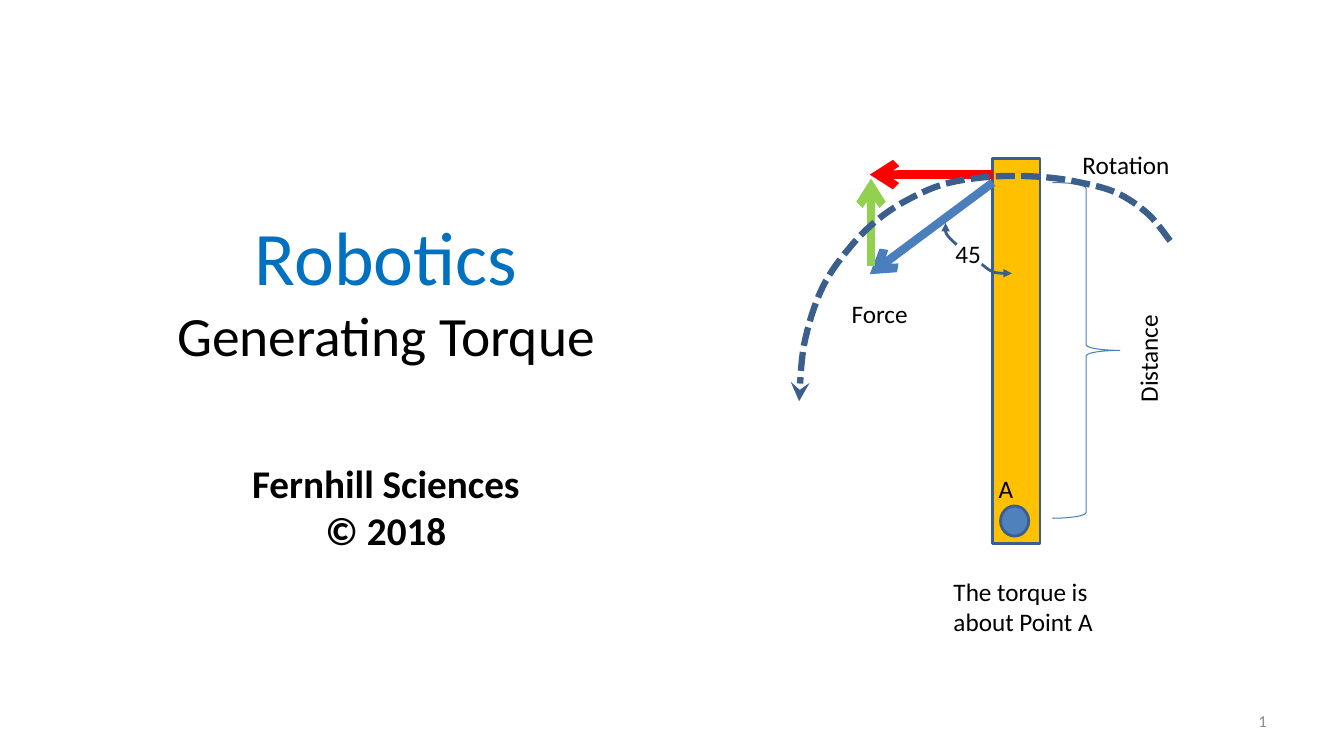
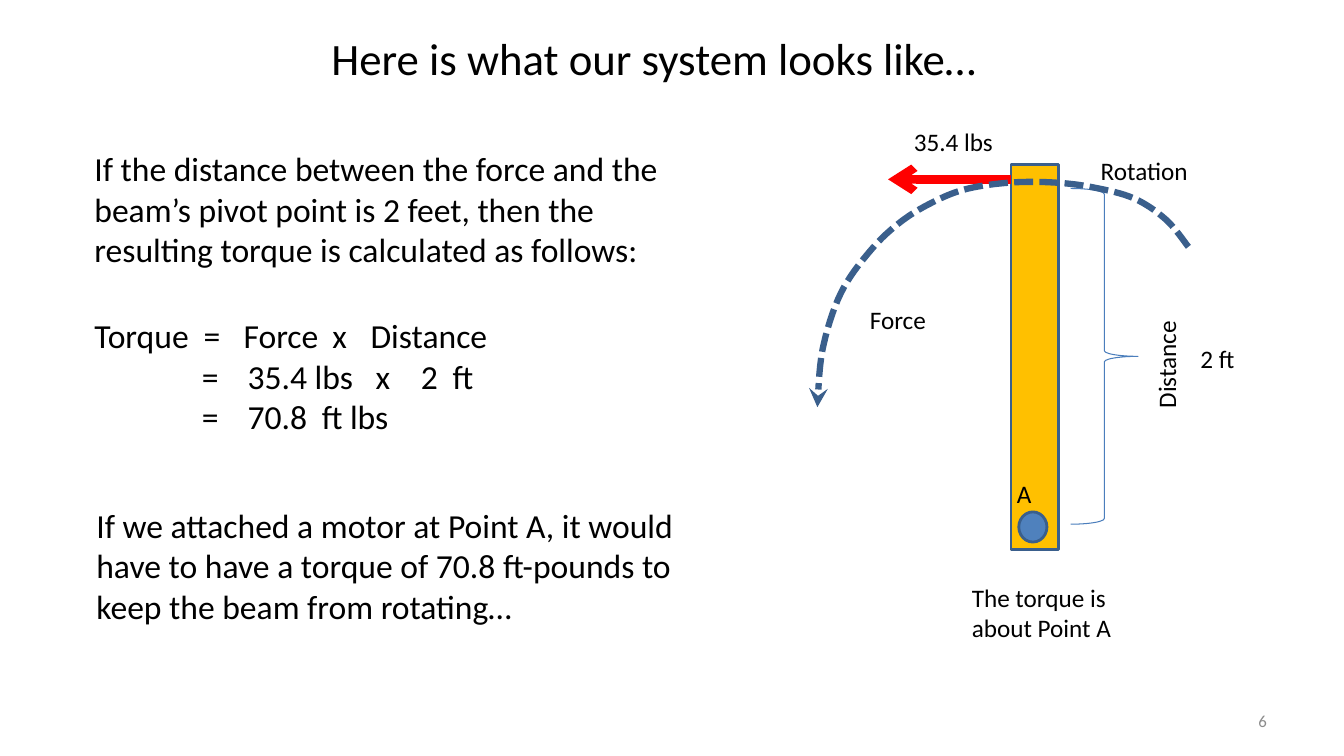
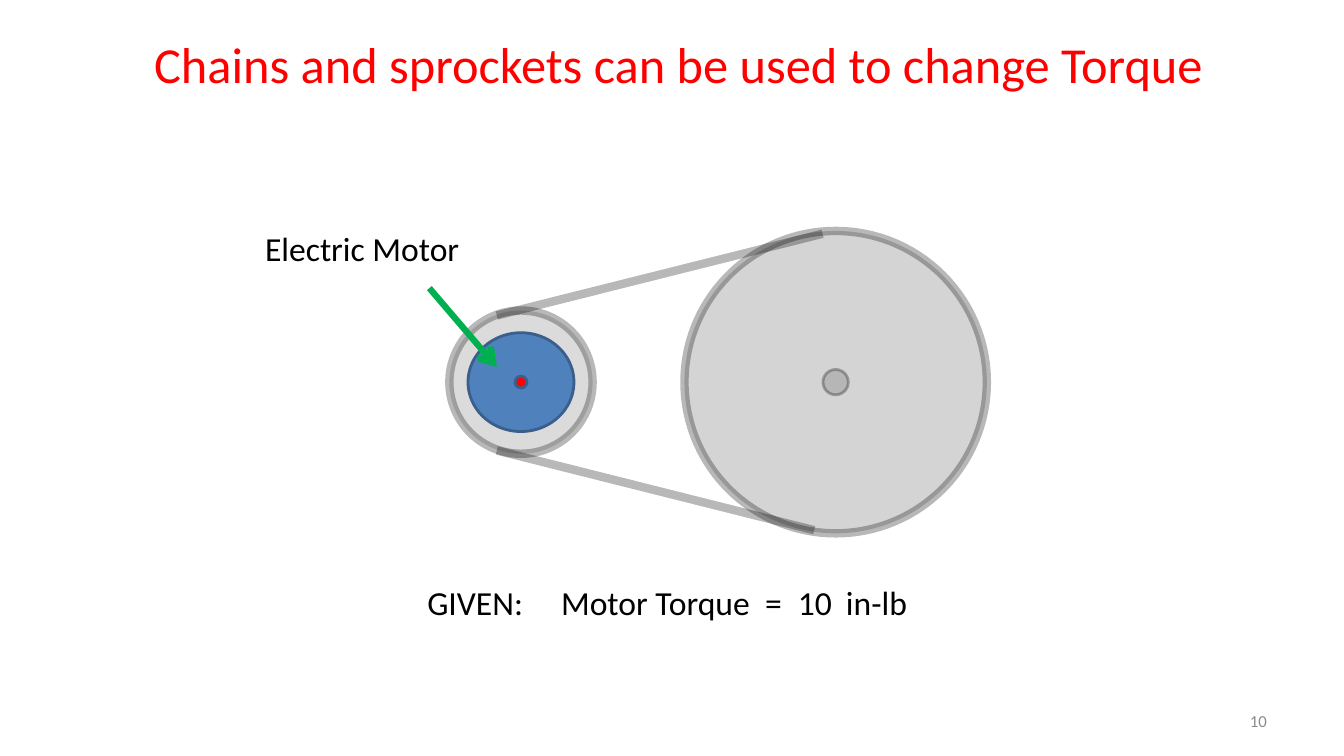
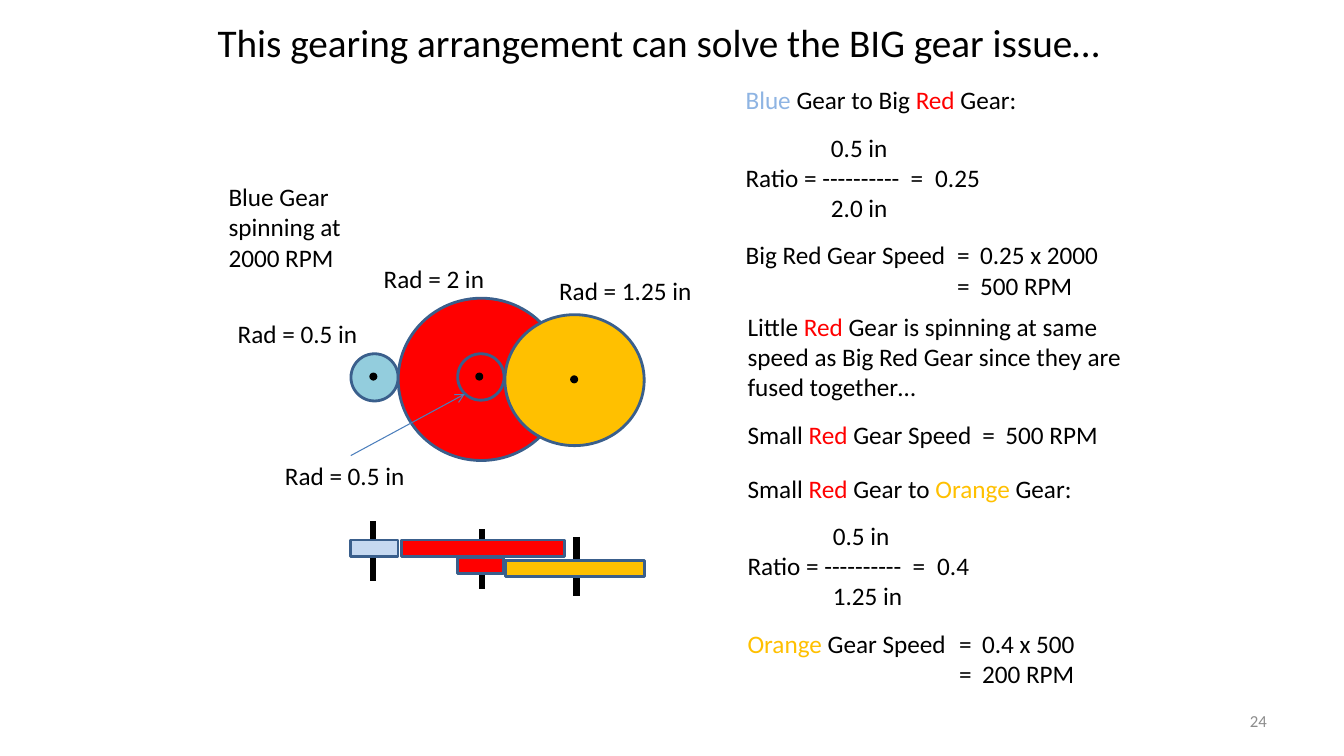
"""Build four slides about torque, sprockets and gears."""

from dataclasses import dataclass

from lxml.etree import SubElement
from pptx import Presentation
from pptx.dml.color import RGBColor
from pptx.enum.dml import MSO_LINE
from pptx.enum.shapes import MSO_CONNECTOR, MSO_SHAPE
from pptx.enum.text import MSO_ANCHOR, MSO_AUTO_SIZE, PP_ALIGN
from pptx.oxml.ns import qn
from pptx.util import Cm, Pt

FONT = "Calibri"
BLACK, GREY = "000000", "8C8C8C"
RED, ORANGE, GREEN, LIME = "FF0000", "FFC000", "00B050", "92D050"
BLUE, OUTLINE, STROKE = "4F81BD", "3A5F8C", "4B7EBC"
TITLE_BLUE, WORD_BLUE, GEAR_BLUE, BAR_BLUE = "0070C0", "8EB4E3", "93CDDD", "C6D9F1"
GAP = 12.2
ROTATION_ARC = [
    (4.47, 2.08), (3.91, 1.4), (3.1, 0.86), (2.06, 0.58), (1.09, 0.46),
    (0, 0.46), (-1.07, 0.61), (-1.88, 0.91), (-2.74, 1.42), (-3.53, 2.16),
    (-4.29, 3.25), (-4.75, 4.67), (-4.88, 6.12),
]


@dataclass
class Line:
    """One paragraph: text or (text, colour) spans, with its own format."""

    spans: object
    tabs: tuple = ()
    before: float = 0
    size: float = 0


def colour(code):
    """Turn a hex string into a colour."""
    return RGBColor.from_string(code)


def smooth_points(knots, steps=8):
    """Return points on a Catmull-Rom curve through the knots."""
    padded = [knots[0], *knots, knots[-1]]
    points = [knots[0]]
    for a, b, c, d in zip(padded, padded[1:], padded[2:], padded[3:]):
        for step in range(1, steps + 1):
            t = step / steps
            points.append(tuple(
                0.5 * (2 * q + (r - p) * t + (2 * p - 5 * q + 4 * r - s) * t ** 2
                       + (3 * q - p - 3 * r + s) * t ** 3)
                for p, q, r, s in zip(a, b, c, d)))
    return points


def write(frame, lines, size=18, ink=BLACK, bold=False, align=PP_ALIGN.LEFT,
          anchor=MSO_ANCHOR.TOP):
    """Fill a text frame with formatted paragraphs."""
    frame.word_wrap = True
    frame.auto_size = MSO_AUTO_SIZE.NONE
    frame.vertical_anchor = anchor
    for index, line in enumerate([lines] if isinstance(lines, str) else lines):
        line = Line(line) if isinstance(line, str) else line
        para = frame.paragraphs[0] if index == 0 else frame.add_paragraph()
        para.alignment = align
        para.space_before = Pt(line.before)
        if line.tabs:
            stops = SubElement(para._p.get_or_add_pPr(), qn("a:tabLst"))
            for stop in line.tabs:
                SubElement(stops, qn("a:tab"), pos=str(Cm(stop)), algn="l")
        spans = [line.spans] if isinstance(line.spans, str) else line.spans
        for part in spans:
            text, shade = (part, ink) if isinstance(part, str) else part
            span = para.add_run()
            span.text = text
            span.font.name = FONT
            span.font.size = Pt(line.size or size)
            span.font.bold = bold
            span.font.color.rgb = colour(shade)


class Sketch:
    """Hold the deck, its style and the current slide."""

    def __init__(self):
        """Start a wide deck."""
        self.deck = Presentation()
        self.deck.slide_width, self.deck.slide_height = Cm(33.87), Cm(19.05)
        self.page = None

    def new_page(self, number, title, place, **style):
        """Add a slide with its title and page number."""
        self.page = self.deck.slides.add_slide(self.deck.slide_layouts[5])
        box = self.page.shapes.title
        box.left, box.top, box.width, box.height = map(Cm, place)
        write(box.text_frame, title, **style)
        self.text(str(number), 24.28, 17.65, 7.9, size=12, ink=GREY,
                  align=PP_ALIGN.RIGHT, anchor=MSO_ANCHOR.MIDDLE)

    def text(self, lines, left, top, width, height=1.02, rotation=0, **style):
        """Add a text box."""
        box = self.page.shapes.add_textbox(Cm(left), Cm(top), Cm(width), Cm(height))
        box.rotation = rotation
        write(box.text_frame, lines, **style)

    def stroke(self, item, ink, weight, head=None, opacity=100):
        """Format the line of a shape or connector."""
        item.line.fill.solid()
        item.line.color.rgb = colour(ink)
        item.line.width = Pt(weight)
        outline = item.element.spPr.find(qn("a:ln"))
        self.fade(outline, opacity)
        if head:
            SubElement(outline, qn("a:tailEnd"), type=head)

    def fade(self, parent, opacity):
        """Make the solid fill of an element partly transparent."""
        if opacity < 100:
            tint = parent.find(f"{qn('a:solidFill')}/{qn('a:srgbClr')}")
            SubElement(tint, qn("a:alpha"), val=str(opacity * 1000))

    def shape(self, kind, left, top, width, height, fill=None, ink=OUTLINE,
              weight=2, fill_opacity=100, line_opacity=100):
        """Add a preset shape."""
        item = self.page.shapes.add_shape(kind, Cm(left), Cm(top), Cm(width), Cm(height))
        item.shadow.inherit = False
        if fill:
            item.fill.solid()
            item.fill.fore_color.rgb = colour(fill)
            self.fade(item.element.spPr, fill_opacity)
        else:
            item.fill.background()
        self.stroke(item, ink, weight, opacity=line_opacity)

    def disc(self, x, y, width, height=None, **style):
        """Add an ellipse around a centre."""
        height = height or width
        self.shape(MSO_SHAPE.OVAL, x - width / 2, y - height / 2, width, height, **style)

    def line(self, start, end, ink, weight, head=None, opacity=100):
        """Add a straight line or arrow."""
        item = self.page.shapes.add_connector(
            MSO_CONNECTOR.STRAIGHT, *map(Cm, (*start, *end)))
        self.stroke(item, ink, weight, head, opacity)
        SubElement(item.element.spPr, qn("a:effectLst"))

    def curve(self, knots, left, top, head, weight=2, dash=None):
        """Add a smooth open arrow, its knots relative to left and top."""
        points = [(Cm(left + x), Cm(top + y)) for x, y in smooth_points(knots)]
        builder = self.page.shapes.build_freeform(*points[0])
        builder.add_line_segments(points[1:], close=False)
        item = builder.convert_to_shape()
        item.shadow.inherit = False
        item.fill.background()
        if dash:
            item.line.dash_style = dash
        self.stroke(item, OUTLINE, weight, head)

    def beam(self, left, top, arrows):
        """Draw the pivoting beam, its labels and force arrows."""
        self.shape(MSO_SHAPE.RECTANGLE, left, top, 1.19, 9.7, fill=ORANGE)
        self.disc(left + 0.55, top + 9.14, 0.71, 0.76, fill=BLUE)
        self.shape(MSO_SHAPE.RIGHT_BRACE, left + 1.5, top + 0.61, 1.7, 8.46,
                   ink=STROKE, weight=0.75)
        for label, x, y, width, height, rotation in [
            ("Force", -3.81, 3.4, 3, 1.02, 0),
            ("Distance", 2.41, 4.39, 3, 1.02, 270),
            ("The torque is about Point A", -1.24, 10.41, 4.34, 1.8, 0),
            ("A", -0.1, 7.8, 3, 1.02, 0),
            ("Rotation", 2.01, -0.36, 3.3, 1.02, 0),
        ]:
            self.text(label, left + x, top + y, width, height, rotation)
        for (x1, y1), (x2, y2), ink in arrows:
            self.line((left + x1, top + y1), (left + x2, top + y2), ink, 6, "arrow")
        self.curve(ROTATION_ARC, left, top, "stealth", 4.5, MSO_LINE.SQUARE_DOT)

    def gear_ratio(self, left, top, heading, radii, ratio, name, speeds):
        """Write the ratio and the speed of a gear pair."""
        fraction, speed = (2.15,), (5.33, 5.91)
        self.text([
            Line(heading),
            Line(f"\t{radii[0]} in", fraction, GAP),
            Line(f"Ratio = ----------\t=\t{ratio}", (4.16, 4.78)),
            Line(f"\t{radii[1]} in", fraction),
            Line([*name, f" Gear Speed\t=\t{speeds[0]}"], speed, GAP),
            Line(f"\t=\t{speeds[1]}", speed),
        ], left, top, 9.75, 5.74)


def cover(sketch):
    """Build the cover with the force components."""
    sketch.new_page(
        1, [Line([("Robotics", TITLE_BLUE)]), Line("Generating Torque", size=39.6)],
        (3.53, 5.23, 12.4, 4.09), size=54, align=PP_ALIGN.CENTER,
        anchor=MSO_ANCHOR.MIDDLE)
    sketch.text(["Fernhill Sciences", "© 2018"], 5.13, 11.46, 9.19, 2.64,
                size=28, bold=True, align=PP_ALIGN.CENTER)
    left, top = 25.02, 3.99
    sketch.beam(left, top, [
        ((0, 0.61), (-3.1, 2.92), STROKE),
        ((0, 0.41), (-3.1, 0.41), RED),
        ((-3.07, 2.72), (-3.07, 0.51), LIME),
    ])
    sketch.text("45", left - 1.19, top + 1.88, 1.4)
    sketch.curve([(-0.28, 2.67), (0.03, 2.87), (0.48, 2.9)], left, top, "triangle")
    sketch.curve([(-0.91, 2.18), (-1.17, 1.9), (-1.19, 1.63)], left, top, "triangle")


def torque_system(sketch):
    """Build the torque calculation."""
    sketch.new_page(6, "Here is what our system looks like…",
                    (8.1, 0.64, 21.79, 1.63), size=32)
    sketch.beam(25.48, 4.14, [((0, 0.38), (-3.1, 0.38), RED)])
    sketch.text("35.4 lbs", 22.78, 3.05, 2.95)
    sketch.text("2 ft", 30, 8.53, 2.24)
    for lines, left, top in [
        ("If the distance between the force and the beam’s pivot point is 2 feet, "
         "then the resulting torque is calculated as follows:", 2.13, 3.61),
        ([Line("Torque\t=\tForce\tx\tDistance", (2.75, 3.76, 6, 6.96)),
          Line("\t=\t35.4 lbs\tx\t2\tft", (2.71, 3.86, 7.09, 8.23, 9.03)),
          Line("\t=\t70.8\tft lbs", (2.71, 3.86, 5.73))], 2.13, 7.82),
        ("If we attached a motor at Point A, it would have to have a torque of "
         "70.8 ft-pounds to keep the beam from rotating…", 2.18, 12.6),
    ]:
        sketch.text(lines, left, top, 15.6, 3.33, size=24)


def sprockets(sketch):
    """Build the chain and sprocket drive."""
    sketch.new_page(10, "Chains and sprockets can be used to change Torque",
                    (3.63, 0.71, 29.64, 1.8), size=36, ink=RED)
    sketch.text([Line("GIVEN:\tMotor Torque\t=\t10\tin-lb", (3.37, 8.51, 9.34, 10.55))],
                10.52, 14.55, 15.88, 1.27, size=24)
    for start, end in [((12.52, 7.95), (20.73, 5.89)), ((12.52, 11.35), (20.52, 13.36))]:
        sketch.line(start, end, BLACK, 6, opacity=27)
    small, big, axis = 13.13, 21.06, 9.63
    for x, width, weight, opacity in [
        (small, 3.61, 6, 14), (big, 7.62, 6, 17), (small, 0.64, 2, 14), (big, 0.64, 2, 14),
    ]:
        sketch.disc(x, axis, width, fill=BLACK, ink=BLACK, weight=weight,
                    fill_opacity=opacity, line_opacity=27)
    sketch.disc(small, axis, 2.67, 2.49, fill=BLUE)
    sketch.disc(small, axis, 0.3, fill=RED)
    sketch.line((10.82, 7.26), (12.52, 9.25), GREEN, 4.5, "arrow")
    sketch.text("Electric Motor", 6.43, 5.61, 7.32, 1.27, size=24)


def gears(sketch):
    """Build the compound gear arrangement."""
    sketch.new_page(24, "This gearing arrangement can solve the BIG gear issue…",
                    (5.23, 0.33, 23.7, 1.45), size=28)
    for index, x in enumerate((9.4, 12.14, 14.53)):
        top = 13.13 + 0.2 * index
        sketch.line((x, top), (x, top + 1.5), BLACK, 4.5)
    for x, y, width, height, fill in [
        (9.44, 9.51, 1.19, 1.19, GEAR_BLUE), (12.13, 9.56, 4.19, 4.09, RED),
        (12.12, 9.5, 1.17, 1.17, RED), (14.48, 9.58, 3.51, 3.3, ORANGE),
    ]:
        sketch.disc(x, y, width, height, fill=fill)
    for x, y in [(9.41, 9.49), (12.08, 9.49), (14.47, 9.56)]:
        sketch.disc(x, y, 0.13, fill=BLACK, ink=BLACK)
    for left, top, width, fill in [
        (8.84, 13.61, 1.19, BAR_BLUE), (10.11, 13.61, 4.11, RED),
        (11.53, 14.05, 1.17, RED), (12.73, 14.12, 3.51, ORANGE),
    ]:
        sketch.shape(MSO_SHAPE.RECTANGLE, left, top, width, 0.41, fill=fill)
    for radius, left, top in [
        (0.5, 5.74, 7.9), (2, 9.42, 6.5), (0.5, 6.93, 11.48), (1.25, 13.84, 6.81),
    ]:
        sketch.text(f"Rad = {radius} in", left, top, 4.19)
    sketch.line((8.84, 11.48), (11.71, 9.93), STROKE, 0.75, "arrow")
    sketch.text("Blue Gear spinning at 2000 RPM", 5.51, 4.45, 3.84, 2.57)
    red, orange = ("Red", RED), ("Orange", ORANGE)
    sketch.gear_ratio(18.54, 2.01, [("Blue", WORD_BLUE), " Gear to Big ", red, " Gear:"],
                      ("0.5", "2.0"), "0.25", ["Big Red"], ("0.25 x 2000", "500 RPM"))
    sketch.text([
        Line(["Little ", red, " Gear is spinning at same speed as Big Red Gear "
              "since they are fused together…"]),
        Line(["Small ", red, " Gear Speed\t=\t500 RPM"], (5.92, 6.5), GAP),
    ], 18.59, 7.72, 10.34, 3.76)
    sketch.gear_ratio(18.59, 11.79, ["Small ", red, " Gear to ", orange, " Gear:"],
                      ("0.5", "1.25"), "0.4", [orange], ("0.4 x 500", "200 RPM"))


def main():
    """Build and save the deck."""
    sketch = Sketch()
    for build in (cover, torque_system, sprockets, gears):
        build(sketch)
    sketch.deck.save("out.pptx")


if __name__ == "__main__":
    main()
